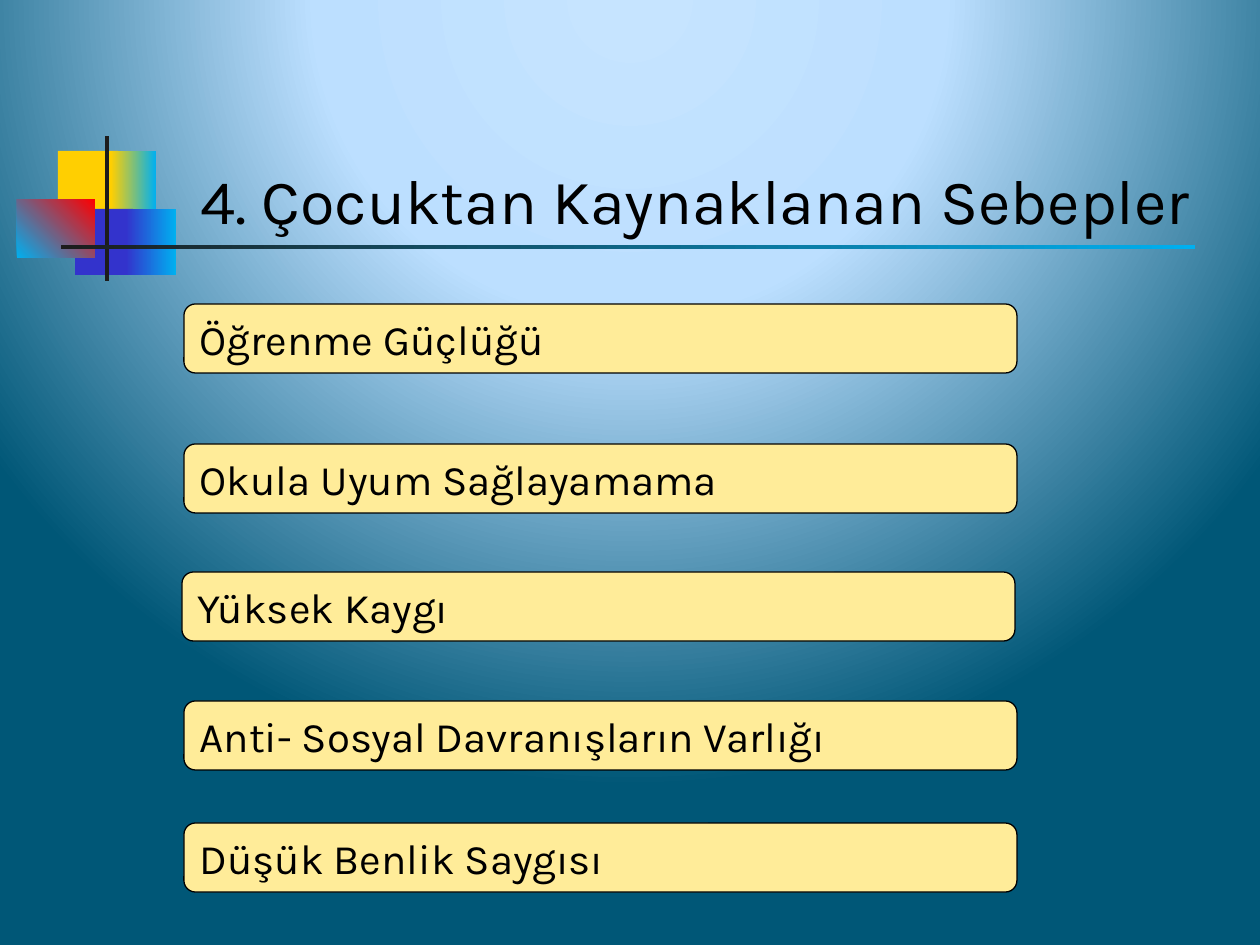
from lxml import etree
from pptx import Presentation
from pptx.dml.color import RGBColor
from pptx.enum.shapes import MSO_SHAPE
from pptx.enum.text import MSO_ANCHOR, PP_ALIGN
from pptx.oxml.ns import qn
from pptx.util import Pt

RECT = MSO_SHAPE.RECTANGLE
ROUND = MSO_SHAPE.ROUNDED_RECTANGLE
TOP, BOTTOM = MSO_ANCHOR.TOP, MSO_ANCHOR.BOTTOM
LEFT, CENTER = PP_ALIGN.LEFT, PP_ALIGN.CENTER
SCALE = 914400 / 126


def px(n):
    return round(n * SCALE)


def rgb(code):
    return RGBColor.from_string(code)


class Deck:
    font = "Karla"
    ink = "000000"
    sky = "00B0F0"
    cream = "FFEC99"

    def __init__(self, width, height):
        self.prs = Presentation()
        self.prs.slide_width = px(width)
        self.prs.slide_height = px(height)
        self.slide = self.prs.slides.add_slide(self.prs.slide_layouts[6])

    def glow(self, stops, **rect):
        self.slide.background.fill.gradient()
        grad = next(self.slide.element.iter(qn("a:gradFill")))
        for child in list(grad):
            grad.remove(child)
        group = etree.SubElement(grad, qn("a:gsLst"))
        for pos, code in stops:
            stop = etree.SubElement(group, qn("a:gs"), pos=str(pos * 1000))
            etree.SubElement(stop, qn("a:srgbClr"), val=code)
        way = etree.SubElement(grad, qn("a:path"), {"path": "circle"})
        sides = {k: str(v * 1000) for k, v in rect.items()}
        etree.SubElement(way, qn("a:fillToRect"), sides)

    def shape(self, kind, box, *colors, angle=0):
        item = self.slide.shapes.add_shape(kind, *map(px, box))
        item.shadow.inherit = False
        item.line.fill.background()
        if len(colors) == 1:
            item.fill.solid()
            item.fill.fore_color.rgb = rgb(colors[0])
        else:
            item.fill.gradient()
            item.fill.gradient_angle = angle
            for stop, code in zip(item.fill.gradient_stops, colors):
                stop.color.rgb = rgb(code)
        return item

    def label(self, item, text, size, align, anchor, before=0):
        frame = item.text_frame
        frame.word_wrap = True
        frame.vertical_anchor = anchor
        para = frame.paragraphs[0]
        para.text = text
        para.alignment = align
        para.space_before = Pt(before)
        para.font.name = self.font
        para.font.size = Pt(size)
        para.font.color.rgb = rgb(self.ink)

    def title(self, box, text):
        item = self.slide.shapes.add_textbox(*map(px, box))
        self.label(item, text, 36, CENTER, BOTTOM)

    def bar(self, box, text):
        item = self.shape(ROUND, box, self.cream)
        item.line.color.rgb = rgb(self.ink)
        item.line.width = Pt(0.75)
        self.label(item, text, 24, LEFT, TOP, 5)


def main():
    deck = Deck(1260, 945)
    deck.glow([(0, "C6E4FF"), (40, "BCDFFF"), (100, "005777")],
              l=50, t=-80, r=50, b=180)

    gold, blue, dark, red = "FFCF01", "3333CC", "1C1C1C", "FF0000"
    deck.shape(RECT, (58, 151, 60, 66), gold)
    deck.shape(RECT, (111, 151, 45, 66), gold, deck.sky)
    deck.shape(RECT, (75, 209, 58, 66), blue)
    deck.shape(RECT, (126, 209, 50, 66), blue, deck.sky)
    deck.shape(RECT, (17, 199, 78, 59), deck.sky, red, angle=45)
    deck.shape(RECT, (105, 136, 4, 145), dark)
    deck.shape(RECT, (61, 245, 1134, 4), dark, deck.sky)

    deck.title((159, 86, 1073, 157), "4. Çocuktan Kaynaklanan Sebepler")
    causes = [
        (184, 304, "Öğrenme Güçlüğü"),
        (184, 444, "Okula Uyum Sağlayamama"),
        (182, 572, "Yüksek Kaygı"),
        (184, 701, "Anti- Sosyal Davranışların Varlığı"),
        (184, 823, "Düşük Benlik Saygısı"),
    ]
    for left, top, text in causes:
        deck.bar((left, top, 833, 69), text)

    deck.prs.save("out.pptx")


if __name__ == "__main__":
    main()
